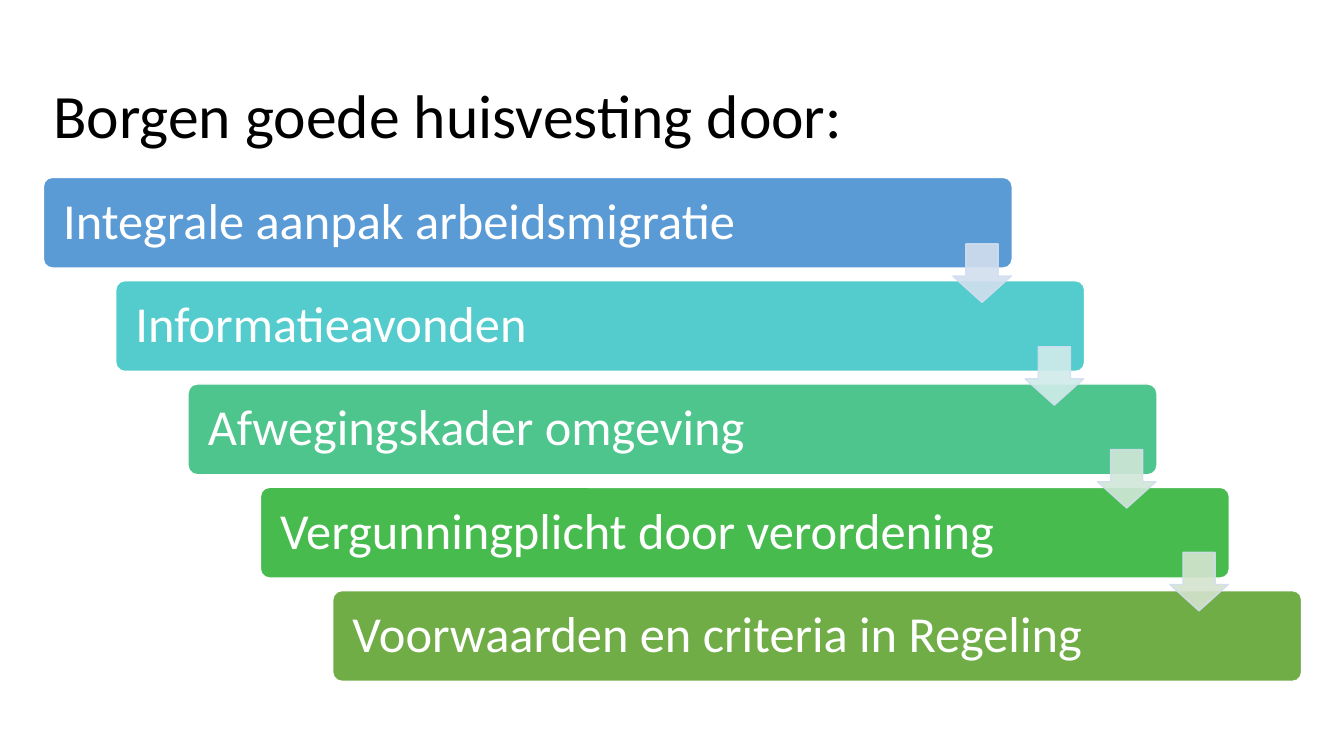
from pptx import Presentation
from pptx.dml.color import RGBColor as RGB
from pptx.enum.shapes import MSO_SHAPE as Kind
from pptx.enum.text import MSO_ANCHOR as Anchor, PP_ALIGN as Align
from pptx.oxml.ns import qn
from pptx.util import Inches, Pt
from lxml.etree import SubElement

INK = {"title": "000000", "text": "FFFFFF", "edge": "FFFFFF", "rim": "D2DEEF"}

# Each step: label, bar colour, colour of the arrow leading on
STEPS = [
    ("Integrale aanpak arbeidsmigratie", "5B9BD5", "D2DEEF"),
    ("Informatieavonden", "54CCCD", "D0ECEA"),
    ("Afwegingskader omgeving", "4DC58D", "D0E7D8"),
    ("Vergunningplicht door verordening", "48BB4F", "D5E3CF"),
    ("Voorwaarden en criteria in Regeling", "70AD47", None),
]

# Staircase grid, in inches
LEFT, RIGHT = 0.43, 12.91
TOP, BASE = 1.76, 6.76
BAR_W, BAR_H = 9.61, 0.9
ARROW = 0.58
COL = (RIGHT - LEFT - BAR_W) / (len(STEPS) - 1)
ROW = (BASE - TOP - BAR_H) / (len(STEPS) - 1)


def write(shape, text, size, color, inset):
    frame = shape.text_frame
    frame.word_wrap = True
    frame.vertical_anchor = Anchor.MIDDLE
    frame.margin_left = frame.margin_right = Inches(inset)
    par = frame.paragraphs[0]
    par.text = text
    par.alignment = Align.LEFT
    par.line_spacing = 0.9
    par.font.name = "Calibri"
    par.font.size = Pt(size)
    par.font.color.rgb = RGB.from_string(color)


def block(slide, kind, box, fill, line, adjust):
    shape = slide.shapes.add_shape(kind, *map(Inches, box))
    shape.shadow.inherit = False
    shape.fill.solid()
    shape.fill.fore_color.rgb = RGB.from_string(fill)
    shape.line.color.rgb = RGB.from_string(line)
    shape.line.width = Pt(1)
    for i, value in enumerate(adjust):
        shape.adjustments[i] = value
    return shape


def fade(shape, share):
    for color in shape.element.spPr.iter(qn("a:srgbClr")):
        SubElement(color, qn("a:alpha")).set("val", str(share * 1000))


def add_bar(slide, i, label, fill):
    box = (LEFT + i * COL, TOP + i * ROW, BAR_W, BAR_H)
    bar = block(slide, Kind.ROUNDED_RECTANGLE, box, fill, INK["edge"], [0.1])
    write(bar, label, 36, INK["text"], 0.17)


def add_arrow(slide, i, fill):
    # Flush with the bar's right end, starting low in the bar
    box = (LEFT + BAR_W + i * COL - ARROW - 0.01, TOP + 0.66 + i * ROW * 0.995,
           ARROW, ARROW)
    arrow = block(slide, Kind.DOWN_ARROW, box, fill, INK["rim"], [0.55, 0.45])
    fade(arrow, 90)


def main():
    deck = Presentation()
    deck.slide_width, deck.slide_height = Inches(13.33), Inches(7.5)
    slide = deck.slides.add_slide(deck.slide_layouts[6])

    # Title
    box = map(Inches, (LEFT, 0.35, RIGHT - LEFT, 1.65))
    title = slide.shapes.add_textbox(*box)
    write(title, "Borgen goede huisvesting door:", 44, INK["title"], 0.1)

    # Bars, then the arrows over them
    for i, (label, fill, _) in enumerate(STEPS):
        add_bar(slide, i, label, fill)
    for i, (_, _, tint) in enumerate(STEPS[:-1]):
        add_arrow(slide, i, tint)

    deck.save("out.pptx")


if __name__ == "__main__":
    main()
